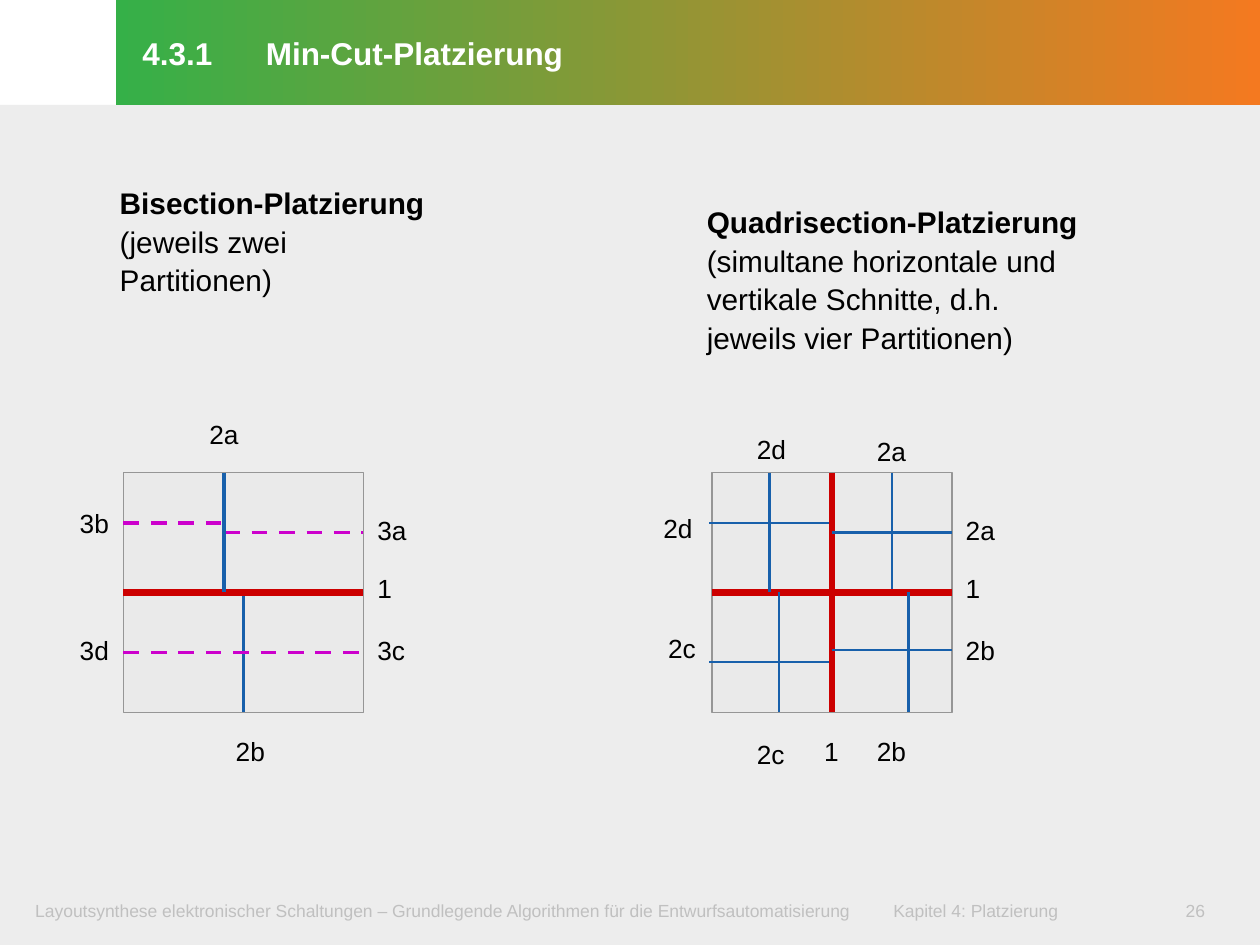
"""Builds the slide on min-cut placement with bisection and quadrisection."""
from dataclasses import dataclass

from lxml.etree import SubElement
from pptx import Presentation
from pptx.dml.color import RGBColor
from pptx.enum.dml import MSO_LINE
from pptx.enum.shapes import MSO_CONNECTOR, MSO_SHAPE
from pptx.enum.text import MSO_ANCHOR, PP_ALIGN
from pptx.oxml.ns import qn
from pptx.util import Inches, Pt


@dataclass(frozen=True)
class Theme:
    font: str = "Arial"
    panel: str = "EDEDED"
    gradient: tuple = ("35B048", "F47920")
    title: str = "FFFFFF"
    text: str = "000000"
    footer: str = "C0C0C0"
    die: str = "EAEAEA"
    border: str = "969696"
    first: str = "CC0000"
    second: str = "1860AB"
    third: str = "CC00CC"
    title_size: int = 18
    heading_size: int = 17
    label_size: int = 15
    footer_size: int = 10


theme = Theme()
presentation = Presentation()
presentation.slide_width, presentation.slide_height = Inches(10), Inches(7.5)
column = presentation.slide_width // 100
row = presentation.slide_height // 75
slide = presentation.slides.add_slide(presentation.slide_layouts[6])


def place(left, top, width, height):
    """Turns grid columns and rows into slide lengths."""
    return (round(left * column), round(top * row),
            round(width * column), round(height * row))


def write(shape, paragraphs, size, color, insets, spacing=None, tab=None,
          anchor=MSO_ANCHOR.TOP):
    """Fills a shape with (text, bold) paragraphs in one type style."""
    frame = shape.text_frame
    frame.word_wrap, frame.vertical_anchor = True, anchor
    frame.margin_left, frame.margin_top, frame.margin_right, frame.margin_bottom = place(*insets)
    for index, (text, bold) in enumerate(paragraphs):
        paragraph = frame.add_paragraph() if index else frame.paragraphs[0]
        if tab:
            tabs = SubElement(paragraph._p.get_or_add_pPr(), qn("a:tabLst"))
            SubElement(tabs, qn("a:tab"), pos=str(round(tab * column)), algn="l")
        if spacing:
            paragraph.line_spacing = Pt(spacing)
        paragraph.alignment = PP_ALIGN.LEFT
        run = paragraph.add_run()
        run.text = text
        run.font.name, run.font.size, run.font.bold = theme.font, Pt(size), bold
        run.font.color.rgb = RGBColor.from_string(color)


panel = slide.shapes.add_shape(MSO_SHAPE.RECTANGLE, *place(0, 8.33, 100, 66.67))
panel.shadow.inherit = False
panel.fill.solid()
panel.fill.fore_color.rgb = RGBColor.from_string(theme.panel)
panel.line.fill.background()

for left, width, text in (
    (1.6, 94.6, "Layoutsynthese elektronischer Schaltungen – Grundlegende Algorithmen "
                "für die Entwurfsautomatisierung\tKapitel 4: Platzierung"),
    (92.9, 5.9, "26"),
):
    footer = slide.shapes.add_textbox(*place(left, 70.85, width, 3.2))
    write(footer, [(text, False)], theme.footer_size, theme.footer, (1.2, 0.6, 1.2, 0.6), tab=68.1)

title = slide.shapes.add_shape(MSO_SHAPE.RECTANGLE, *place(9.2, 0, 90.8, 8.33))
title.shadow.inherit = False
title.fill.gradient()
title.fill.gradient_angle = 0
for stop, position, color in zip(title.fill.gradient_stops, (0, 1), theme.gradient):
    stop.position, stop.color.rgb = position, RGBColor.from_string(color)
title.line.fill.background()
heading_insets = (2.1, 0.5, 1, 0.7)
write(title, [("4.3.1\tMin-Cut-Platzierung", True)], theme.title_size, theme.title,
      heading_insets, spacing=23.5, tab=9.8, anchor=MSO_ANCHOR.MIDDLE)

headings = (
    ((7.4, 13.95, 29.1, 10.4), [("Bisection-Platzierung", True),
                                ("(jeweils zwei Partitionen)", False)]),
    ((54, 15.42, 35.4, 13.5), [("Quadrisection-Platzierung", True),
                               ("(simultane horizontale und vertikale Schnitte, d.h.", False),
                               ("jeweils vier Partitionen)", False)]),
)
for box, paragraphs in headings:
    heading = slide.shapes.add_textbox(*place(*box))
    write(heading, paragraphs, theme.heading_size, theme.text, heading_insets,
          spacing=22, anchor=MSO_ANCHOR.MIDDLE)

side, die_top = 19.05, 37.5
side_middles = {(0.5, 0): 0, (0, 0.5): 1, (0.5, 1): 2, (1, 0.5): 3}
main_cut = (theme.first, 4.5, None)
cross_cut = (theme.first, 3, None)
bisection_cut = (theme.second, 2.25, None)
dashed_cut = (theme.third, 2.25, MSO_LINE.DASH)
quadrisection_cut = (theme.second, 1.5, None)

dies = (
    (9.8,
     ((bisection_cut, (0.5, 0.5), (0.5, 1)),
      (main_cut, (0, 0.5), (1, 0.5)),
      (dashed_cut, (0.42, 0.25), (1, 0.25)),
      (dashed_cut, (0, 0.75), (1, 0.75)),
      (bisection_cut, (0.42, 0), (0.42, 0.5)),
      (dashed_cut, (0, 0.21), (0.42, 0.21))),
     (("1", 1, 0.39), ("2b", 0.41, 1.07), ("3a", 1, 0.15), ("3c", 1, 0.65),
      ("2a", 0.3, -0.25), ("3b", -0.24, 0.12), ("3d", -0.24, 0.65))),
    (56.5,
     ((cross_cut, (0.5, 0), (0.5, 1)),
      (quadrisection_cut, (0.75, 0), (0.75, 0.5)),
      (main_cut, (0, 0.5), (1, 0.5)),
      (quadrisection_cut, (0.5, 0.25), (1, 0.25)),
      (quadrisection_cut, (0.82, 0.5), (0.82, 1)),
      (quadrisection_cut, (0.5, 0.74), (1, 0.74)),
      (quadrisection_cut, (0.24, 0), (0.24, 0.5)),
      (quadrisection_cut, (-0.01, 0.21), (0.49, 0.21)),
      (quadrisection_cut, (0.28, 0.5), (0.28, 1)),
      (quadrisection_cut, (-0.01, 0.79), (0.49, 0.79))),
     (("1", 1, 0.39), ("1", 0.41, 1.07), ("2a", 1, 0.15), ("2b", 1, 0.65),
      ("2b", 0.63, 1.07), ("2a", 0.63, -0.18), ("2d", -0.26, 0.14),
      ("2d", 0.13, -0.19), ("2c", -0.24, 0.64), ("2c", 0.13, 1.08))),
)

for die_left, cuts, labels in dies:
    die = slide.shapes.add_shape(MSO_SHAPE.RECTANGLE, *place(die_left, die_top, side, side))
    die.shadow.inherit = False
    die.fill.solid()
    die.fill.fore_color.rgb = RGBColor.from_string(theme.die)
    die.line.color.rgb = RGBColor.from_string(theme.border)
    die.line.width = Pt(0.75)

    for (color, weight, dash), start, end in cuts:
        ends = [die_left + start[0] * side, die_top + start[1] * side,
                die_left + end[0] * side, die_top + end[1] * side]
        cut = slide.shapes.add_connector(MSO_CONNECTOR.STRAIGHT, *place(*ends))
        cut.line.color.rgb = RGBColor.from_string(color)
        cut.line.width = Pt(weight)
        if dash:
            cut.line.dash_style = dash
        SubElement(cut._element.spPr, qn("a:effectLst"))
        if start in side_middles:
            cut.begin_connect(die, side_middles[start])
        if end in side_middles:
            cut.end_connect(die, side_middles[end])

    for text, across, down in labels:
        width = 2.2 + 1.1 * len(text)
        label = slide.shapes.add_textbox(
            *place(die_left + across * side, die_top + down * side, width, 3.5))
        write(label, [(text, False)], theme.label_size, theme.text, (1.1, 0.5, 0.5, 0.5))

presentation.save("out.pptx")
